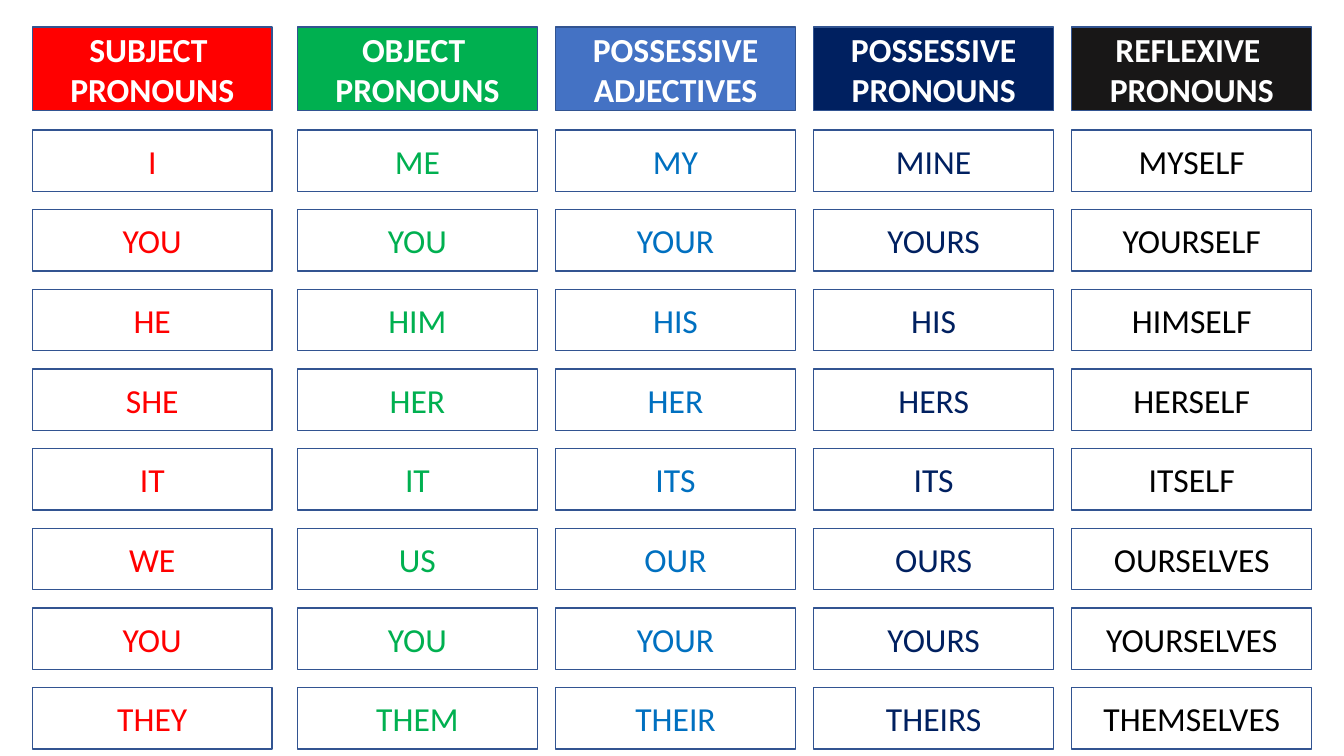
"""Build a slide with a grid of English pronouns and possessive adjectives."""
from pptx import Presentation
from pptx.dml.color import RGBColor
from pptx.enum.shapes import MSO_SHAPE
from pptx.enum.text import MSO_ANCHOR, PP_ALIGN
from pptx.util import Inches, Pt

RED = RGBColor(0xFF, 0x00, 0x00)
GREEN = RGBColor(0x00, 0xB0, 0x50)
BLUE = RGBColor(0x44, 0x72, 0xC4)
BRIGHT_BLUE = RGBColor(0x00, 0x70, 0xC0)
NAVY = RGBColor(0x00, 0x20, 0x60)
CHARCOAL = RGBColor(0x18, 0x17, 0x17)
BLACK = RGBColor(0x00, 0x00, 0x00)
WHITE = RGBColor(0xFF, 0xFF, 0xFF)
BORDER = RGBColor(0x32, 0x54, 0x91)

CATEGORIES = [
    ("SUBJECT \nPRONOUNS", RED, RED,
     ["I", "YOU", "HE", "SHE", "IT", "WE", "YOU", "THEY"]),
    ("OBJECT \nPRONOUNS", GREEN, GREEN,
     ["ME", "YOU", "HIM", "HER", "IT", "US", "YOU", "THEM"]),
    ("POSSESSIVE\nADJECTIVES", BLUE, BRIGHT_BLUE,
     ["MY", "YOUR", "HIS", "HER", "ITS", "OUR", "YOUR", "THEIR"]),
    ("POSSESSIVE\nPRONOUNS", NAVY, NAVY,
     ["MINE", "YOURS", "HIS", "HERS", "ITS", "OURS", "YOURS", "THEIRS"]),
    ("REFLEXIVE \nPRONOUNS", CHARCOAL, BLACK,
     ["MYSELF", "YOURSELF", "HIMSELF", "HERSELF", "ITSELF", "OURSELVES",
      "YOURSELVES", "THEMSELVES"]),
]

COLUMN_LEFTS = [0.32] + [2.95 + 2.56 * column for column in range(4)]
CARD_WIDTH = 2.38
HEADING_TOP, HEADING_HEIGHT = 0.27, 0.83
WORD_TOP, WORD_HEIGHT, ROW_STEP = 1.29, 0.61, 0.79


def add_card(slide, text, left, top, height, fill, color, bold=False):
    """Add one outlined card with centred text."""
    card = slide.shapes.add_shape(
        MSO_SHAPE.RECTANGLE, Inches(left), Inches(top),
        Inches(CARD_WIDTH), Inches(height))
    card.shadow.inherit = False
    card.fill.solid()
    card.fill.fore_color.rgb = fill
    card.line.color.rgb = BORDER
    card.line.width = Pt(1)
    frame = card.text_frame
    frame.text = text
    frame.vertical_anchor = MSO_ANCHOR.MIDDLE
    for paragraph in frame.paragraphs:
        paragraph.alignment = PP_ALIGN.CENTER
        for run in paragraph.runs:
            run.font.name = "Calibri"
            run.font.size = Pt(24)
            run.font.bold = bold
            run.font.color.rgb = color


def main():
    """Lay out the categories as columns and save the deck."""
    deck = Presentation()
    deck.slide_width, deck.slide_height = Inches(13.33), Inches(7.5)
    slide = deck.slides.add_slide(deck.slide_layouts[6])
    for left, (heading, fill, color, words) in zip(COLUMN_LEFTS, CATEGORIES):
        add_card(slide, heading, left, HEADING_TOP, HEADING_HEIGHT,
                 fill, WHITE, bold=True)
        for row, word in enumerate(words):
            add_card(slide, word, left, WORD_TOP + row * ROW_STEP,
                     WORD_HEIGHT, WHITE, color)
    deck.save("out.pptx")


if __name__ == "__main__":
    main()
